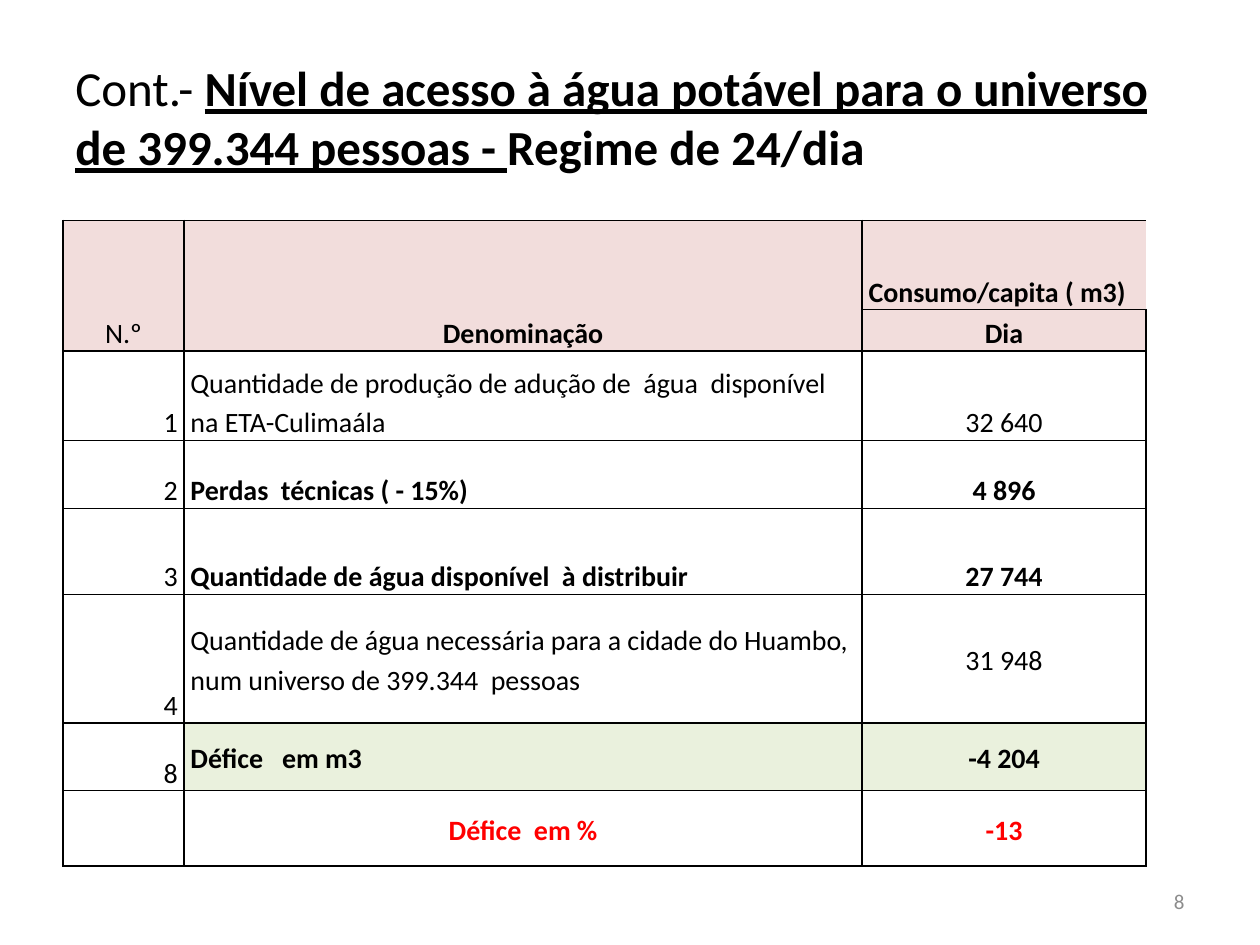
from lxml.etree import SubElement as Sub
from pptx import Presentation
from pptx.dml.color import RGBColor
from pptx.enum.text import MSO_ANCHOR as Anchor, PP_ALIGN as Align
from pptx.oxml.ns import qn
from pptx.util import Cm, Pt

BLACK, RED, GREY = "000000", "FF0000", "8C8C8C"
PINK, GREEN, WHITE = "F2DDDC", "EAF1DD", "FFFFFF"
LEFT, MID, RIGHT = Align.LEFT, Align.CENTER, Align.RIGHT
LOW, HALF = Anchor.BOTTOM, Anchor.MIDDLE


def color(code):
    return RGBColor.from_string(code)


class Deck:
    font = "Calibri"
    size = 16
    space = 1.15
    inset = Cm(0.13)

    def __init__(self, wide, high):
        self.prs = Presentation()
        self.prs.slide_width, self.prs.slide_height = Cm(wide), Cm(high)
        self.slide = self.prs.slides.add_slide(self.prs.slide_layouts[6])

    def style(self, run, size, code=BLACK, bold=False, under=False):
        font = run.font
        font.name, font.size = self.font, Pt(size)
        font.bold, font.underline = bold, under
        font.color.rgb = color(code)

    def text(self, box, runs, size, code=BLACK, align=LEFT):
        frame = self.slide.shapes.add_textbox(*map(Cm, box)).text_frame
        frame.word_wrap = True
        frame.vertical_anchor = HALF
        para = frame.paragraphs[0]
        para.alignment = align
        for words, bold, under in runs:
            run = para.add_run()
            run.text = words
            self.style(run, size, code, bold, under)

    def table(self, left, top, cols, rows):
        grid = self.slide.shapes.add_table(
            len(rows), len(cols), Cm(left), Cm(top),
            Cm(sum(cols)), Cm(sum(rows))).table
        grid.first_row = grid.horz_banding = False
        for col, wide in zip(grid.columns, cols):
            col.width = Cm(wide)
        for row, high in zip(grid.rows, rows):
            row.height = Cm(high)
        for cell in grid.iter_cells():
            cell.fill.background()
            self.border(cell)
        return grid

    def border(self, cell, sides="LRTB"):
        props = cell._tc.get_or_add_tcPr()
        for spot, side in enumerate("LRTB"):
            for old in props.findall(qn(f"a:ln{side}")):
                props.remove(old)
            line = Sub(props, qn(f"a:ln{side}"), w=str(Pt(1)))
            if side in sides:
                fill = Sub(line, qn("a:solidFill"))
                Sub(fill, qn("a:srgbClr"), val=BLACK)
            else:
                Sub(line, qn("a:noFill"))
            props.insert(spot, line)

    def cell(self, cell, words, align, bold=False, anchor=LOW,
             fill=None, code=BLACK):
        cell.margin_left = cell.margin_right = self.inset
        cell.margin_top = cell.margin_bottom = 0
        cell.vertical_anchor = anchor
        if fill:
            cell.fill.solid()
            cell.fill.fore_color.rgb = color(fill)
        para = cell.text_frame.paragraphs[0]
        para.text = words
        para.alignment, para.line_spacing = align, self.space
        for run in para.runs:
            self.style(run, self.size, code, bold)


def main():
    deck = Deck(25.4, 19.05)

    # Title
    deck.text((1.27, 0.76, 22.86, 3.18), [
        ("Cont.- ", False, False),
        ("Nível de acesso à água potável para o universo "
         "de 399.344 pessoas - ", True, True),
        ("Regime de 24/dia", True, False)], 28)

    # Table grid
    grid = deck.table(1.27, 4.44, [2.44, 13.67, 5.72],
                      [1.8, 0.84, 1.8, 1.37, 1.73, 2.59, 1.37, 1.52])

    # Header
    for col in (0, 1):
        grid.cell(0, col).merge(grid.cell(1, col))
    heads = [(0, 0, "N.º", MID, False), (0, 1, "Denominação", MID, True),
             (0, 2, "Consumo/capita ( m3)", LEFT, True),
             (1, 2, "Dia", MID, True)]
    for row, col, words, align, bold in heads:
        deck.cell(grid.cell(row, col), words, align, bold, fill=PINK)
    deck.border(grid.cell(0, 2), "LTB")

    # Body: number, name, value, bold, anchor, fill, name align, colour
    body = [
        ("1", "Quantidade de produção de adução de  água  disponível "
         "na ETA-Culimaála", "32 640", False, LOW, None, LEFT, BLACK),
        ("2", "Perdas  técnicas ( - 15%)", "4 896",
         True, LOW, None, LEFT, BLACK),
        ("3", "Quantidade de água disponível  à distribuir", "27 744",
         True, LOW, None, LEFT, BLACK),
        ("4", "Quantidade de água necessária para a cidade do Huambo, "
         "num universo de 399.344  pessoas", "31 948",
         False, HALF, None, LEFT, BLACK),
        ("8", "Défice   em m3", "-4 204", True, HALF, GREEN, LEFT, BLACK),
        ("", "Défice  em %", "-13", True, HALF, WHITE, MID, RED),
    ]
    for row, (num, name, value, bold, anchor, fill, align, code) in enumerate(
            body, 2):
        deck.cell(grid.cell(row, 0), num, RIGHT)
        deck.cell(grid.cell(row, 1), name, align, bold, anchor, fill, code)
        deck.cell(grid.cell(row, 2), value, MID, bold, anchor, fill, code)

    # Slide number
    deck.text((18.2, 17.66, 5.93, 1.01), [("8", False, False)],
              12, GREY, RIGHT)

    deck.prs.save("out.pptx")


if __name__ == "__main__":
    main()
